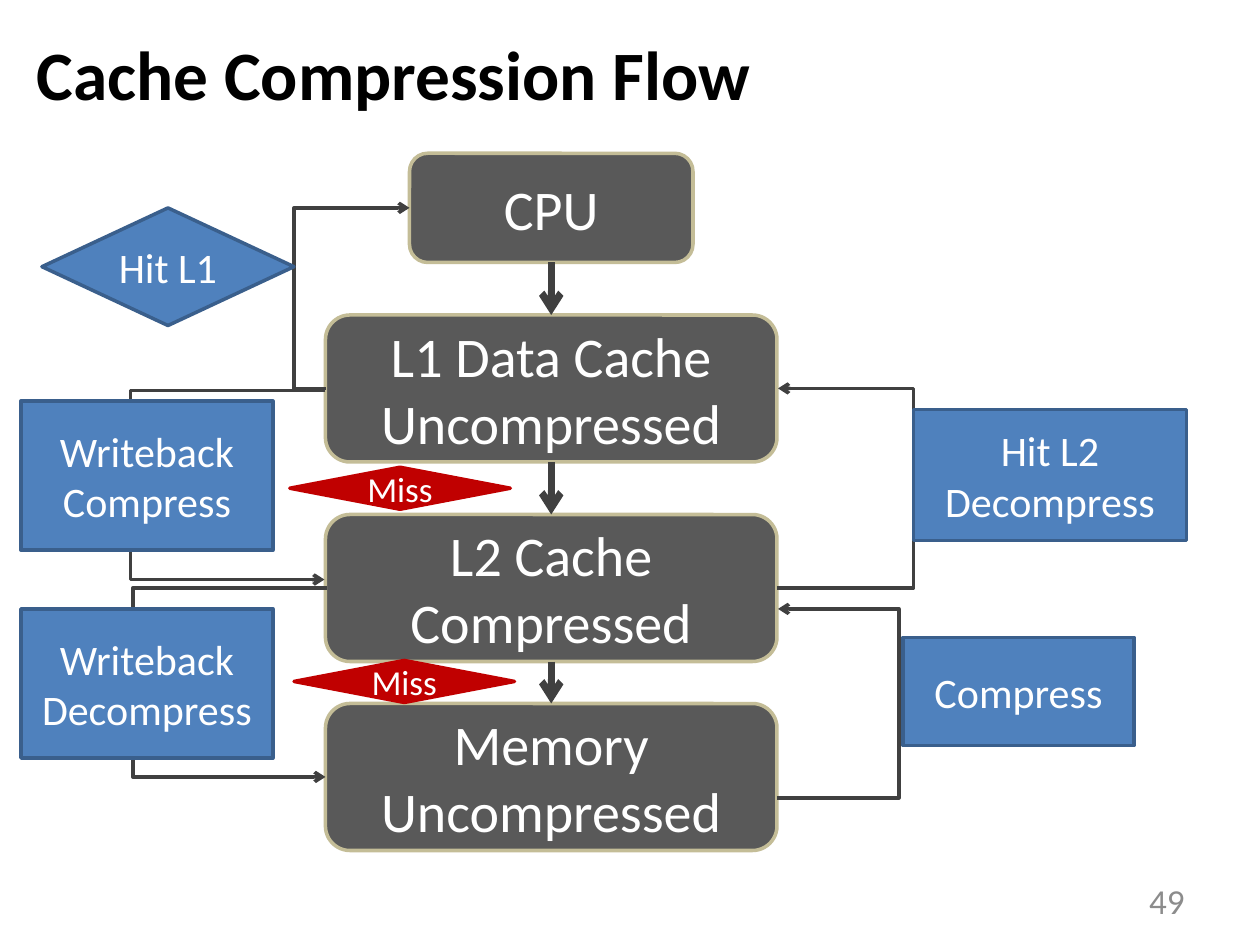
from dataclasses import dataclass

from pptx import Presentation
from pptx.dml.color import RGBColor
from pptx.enum.shapes import MSO_CONNECTOR as Link, MSO_SHAPE as Preset
from pptx.enum.text import MSO_ANCHOR as Anchor, PP_ALIGN as Align
from pptx.oxml.ns import qn
from pptx.util import Emu, Inches, Pt
from lxml.etree import SubElement

FONT = "Calibri"
BLACK = RGBColor(0x00, 0x00, 0x00)
WHITE = RGBColor(0xFF, 0xFF, 0xFF)
PAGE_GREY = RGBColor(0x8C, 0x8C, 0x8C)
STAGE_FILL = RGBColor(0x59, 0x59, 0x59)
STAGE_EDGE = RGBColor(0xC4, 0xBD, 0x97)
ARROW_GREY = RGBColor(0x40, 0x40, 0x40)
STEP_FILL = RGBColor(0x4F, 0x81, 0xBD)
STEP_EDGE = RGBColor(0x3A, 0x5F, 0x8C)
MISS_RED = RGBColor(0xC0, 0x00, 0x00)

COLUMNS, ROWS = 120, 90
CELL = Inches(10) // COLUMNS


@dataclass(frozen=True)
class Look:
    preset: Preset
    fill: RGBColor
    edge: RGBColor
    size: float


@dataclass(frozen=True)
class Node:
    label: str
    look: Look
    col: float
    row: float
    cols: float
    rows: float


@dataclass(frozen=True)
class Route:
    start: tuple[float, float]
    end: tuple[float, float]
    turn_col: float


STAGE = Look(Preset.ROUNDED_RECTANGLE, STAGE_FILL, STAGE_EDGE, 32)
STEP = Look(Preset.RECTANGLE, STEP_FILL, STEP_EDGE, 24)
HIT = Look(Preset.DIAMOND, STEP_FILL, STEP_EDGE, 24)
MISS = Look(Preset.DIAMOND, MISS_RED, MISS_RED, 20)

STAGES = [
    Node("CPU", STAGE, 39, 14.6, 27, 10.4),
    Node("L1 Data Cache\nUncompressed", STAGE, 31, 30, 43, 14),
    Node("L2 Cache\nCompressed", STAGE, 31, 49, 43, 14),
    Node("Memory\nUncompressed", STAGE, 31, 67, 43, 14),
]
STEPS = [
    Node("Hit L1", HIT, 4, 19.8, 24, 11.2),
    Node("Miss", MISS, 27.6, 44.5, 21, 4),
    Node("Miss", MISS, 28, 62.9, 21, 4),
    Node("Hit L2\nDecompress", STEP, 87, 39, 26, 12.5),
    Node("Compress", STEP, 86, 60.7, 22, 10.3),
    Node("Writeback\nCompress", STEP, 2, 38.2, 24, 14.2),
    Node("Writeback\nDecompress", STEP, 2, 58, 24, 14.2),
]
ROUTES = [
    Route((31, 37), (39, 19.8), 28),
    Route((74, 56), (74.1, 37), 87.1),
    Route((74, 76), (74.1, 58), 85.7),
    Route((31, 37.2), (30.9, 55.2), 12.3),
    Route((31.1, 56), (31, 74), 12.5),
]


def grid(*cells: float) -> list[Emu]:
    return [Emu(round(cell * CELL)) for cell in cells]


def write(shape, text: str, size: float, color: RGBColor, align: Align, bold: bool = False) -> None:
    frame = shape.text_frame
    frame.text = text
    frame.word_wrap = True
    frame.vertical_anchor = Anchor.MIDDLE
    for paragraph in frame.paragraphs:
        paragraph.alignment = align
        for run in paragraph.runs:
            run.font.name = FONT
            run.font.size = Pt(size)
            run.font.bold = bold
            run.font.color.rgb = color


def draw_node(slide, node: Node):
    look = node.look
    shape = slide.shapes.add_shape(look.preset, *grid(node.col, node.row, node.cols, node.rows))
    shape.shadow.inherit = False
    shape.fill.solid()
    shape.fill.fore_color.rgb = look.fill
    shape.line.color.rgb = look.edge
    shape.line.width = Pt(2)
    write(shape, node.label, look.size, WHITE, Align.CENTER)
    if look.preset == Preset.DIAMOND:
        shape.text_frame.margin_left = shape.text_frame.margin_right = 0
    return shape


def style_arrow(arrow, width: float) -> None:
    arrow.line.color.rgb = ARROW_GREY
    arrow.line.width = Pt(width)
    SubElement(arrow.line._get_or_add_ln(), qn("a:tailEnd"), type="arrow")
    SubElement(arrow._element.spPr, qn("a:effectLst"))


def draw_descent(slide, upper, lower) -> None:
    arrow = slide.shapes.add_connector(Link.STRAIGHT, 0, 0, 0, 0)
    arrow.begin_connect(upper, 2)
    arrow.end_connect(lower, 0)
    style_arrow(arrow, 4)


def draw_route(slide, route: Route) -> None:
    arrow = slide.shapes.add_connector(Link.ELBOW, *grid(*route.start, *route.end))
    start_col, end_col = route.start[0], route.end[0]
    bend = round((route.turn_col - start_col) / (end_col - start_col) * 100000)
    geometry = arrow._element.spPr.find(qn("a:prstGeom"))
    guides = geometry.find(qn("a:avLst"))
    if guides is None:
        guides = SubElement(geometry, qn("a:avLst"))
    SubElement(guides, qn("a:gd"), name="adj1", fmla=f"val {bend}")
    style_arrow(arrow, 2)


def main() -> None:
    deck = Presentation()
    deck.slide_width, deck.slide_height = grid(COLUMNS, ROWS)
    slide = deck.slides.add_slide(deck.slide_layouts[5])

    title = slide.shapes.title
    title.left, title.top, title.width, title.height = grid(2.3, 1.9, 113, 10)
    write(title, "Cache Compression Flow", 39.6, BLACK, Align.LEFT, bold=True)

    page_number = slide.shapes.add_textbox(*grid(86, 83.4, 28, 4.8))
    write(page_number, "49", 20, PAGE_GREY, Align.RIGHT)

    stages = [draw_node(slide, stage) for stage in STAGES]
    for upper, lower in zip(stages, stages[1:]):
        draw_descent(slide, upper, lower)
    for route in ROUTES:
        draw_route(slide, route)
    for step in STEPS:
        draw_node(slide, step)

    deck.save("out.pptx")


if __name__ == "__main__":
    main()
